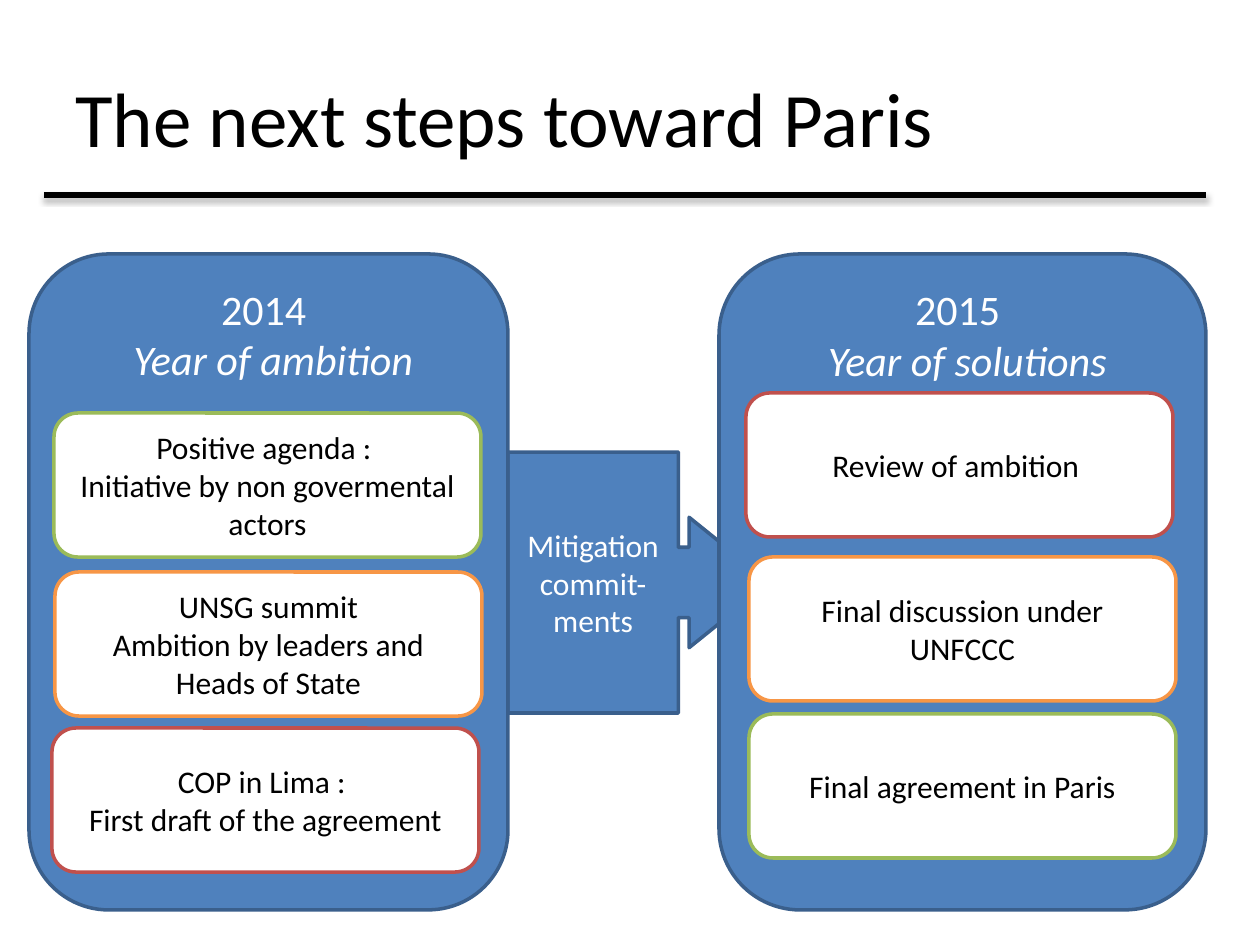
from dataclasses import dataclass

from lxml import etree
from pptx import Presentation
from pptx.dml.color import RGBColor
from pptx.enum.shapes import MSO_CONNECTOR, MSO_SHAPE
from pptx.enum.text import MSO_ANCHOR, PP_ALIGN
from pptx.oxml.ns import qn
from pptx.util import Emu, Pt

ROUND = MSO_SHAPE.ROUNDED_RECTANGLE
ARROW = MSO_SHAPE.RIGHT_ARROW_CALLOUT
LINE = MSO_CONNECTOR.STRAIGHT
TOP, MID = MSO_ANCHOR.TOP, MSO_ANCHOR.MIDDLE
LEFT, MIDDLE = PP_ALIGN.LEFT, PP_ALIGN.CENTER

SCALE = 914400 / 126  # EMU in one px


@dataclass(frozen=True)
class Theme:
    font: str = "Calibri"
    black: str = "000000"
    white: str = "FFFFFF"
    blue: str = "4F81BD"
    edge: str = "3A5F8C"
    green: str = "9BBB59"
    orange: str = "F79646"
    red: str = "C0504D"
    title: int = 44
    head: int = 24
    body: int = 18
    border: int = 2
    rule: int = 3


@dataclass(frozen=True)
class Card:
    x: int
    y: int
    color: str
    text: str


@dataclass(frozen=True)
class Panel:
    x: int
    width: int
    text: str
    cards: tuple[Card, ...]


THEME = Theme()
PANEL_Y, PANEL_H = 254, 656
CARD_W, CARD_H = 427, 144

PANELS = (
    Panel(719, 487, "2015 \n Year of solutions", (
        Card(749, 714, THEME.green, "Final agreement in Paris"),
        Card(749, 557, THEME.orange, "Final discussion under UNFCCC"),
        Card(746, 393, THEME.red, "Review of ambition "),
    )),
    Panel(29, 479, "2014 \n Year of ambition", (
        Card(54, 413, THEME.green,
             "Positive agenda : \nInitiative by non govermental actors"),
        Card(55, 572, THEME.orange,
             "UNSG summit\nAmbition by leaders and Heads of State"),
        Card(52, 728, THEME.red,
             "COP in Lima : \nFirst draft of the agreement"),
    )),
)


def px(count: int) -> Emu:
    return Emu(round(count * SCALE))


def rgb(color: str) -> RGBColor:
    return RGBColor.from_string(color)


def write(shape, text: str, size: int, color: str, align=MIDDLE, anchor=MID) -> None:
    frame = shape.text_frame
    frame.text = text
    frame.word_wrap = True
    frame.vertical_anchor = anchor
    for para in frame.paragraphs:
        para.alignment = align
        for run in para.runs:
            run.font.name = THEME.font
            run.font.size = Pt(size)
            run.font.color.rgb = rgb(color)


def box(slide, kind, x: int, y: int, width: int, height: int, fill: str, edge: str):
    shape = slide.shapes.add_shape(kind, px(x), px(y), px(width), px(height))
    shape.shadow.inherit = False
    shape.fill.solid()
    shape.fill.fore_color.rgb = rgb(fill)
    shape.line.color.rgb = rgb(edge)
    shape.line.width = Pt(THEME.border)
    return shape


def draw_title(slide) -> None:
    title = slide.shapes.add_textbox(px(63), px(38), px(1134), px(158))
    write(title, "The next steps toward Paris", THEME.title, THEME.black, LEFT)


def draw_rule(slide) -> None:
    rule = slide.shapes.add_connector(LINE, px(44), px(195), px(1206), px(195))
    rule.line.color.rgb = rgb(THEME.black)
    rule.line.width = Pt(THEME.rule)
    # Soft shadow straight below the rule
    effects = etree.SubElement(rule._element.spPr, qn("a:effectLst"))
    shadow = etree.SubElement(effects, qn("a:outerShdw"), blurRad=str(Pt(3.1)),
                              dist=str(Pt(1.8)), dir="5400000", rotWithShape="0")
    tint = etree.SubElement(shadow, qn("a:srgbClr"), val=THEME.black)
    etree.SubElement(tint, qn("a:alpha"), val="35000")


def draw_arrow(slide) -> None:
    arrow = box(slide, ARROW, 508, 452, 262, 261, THEME.blue, THEME.edge)
    for index, value in enumerate((0.27, 0.25, 0.31, 0.65)):
        arrow.adjustments[index] = value
    write(arrow, "Mitigation commit-ments", THEME.body, THEME.white)


def draw_panel(slide, panel: Panel) -> None:
    shape = box(slide, ROUND, panel.x, PANEL_Y, panel.width, PANEL_H,
                THEME.blue, THEME.edge)
    write(shape, panel.text, THEME.head, THEME.white, anchor=TOP)
    for run in shape.text_frame.paragraphs[1].runs:
        run.font.italic = True
    for card in panel.cards:
        item = box(slide, ROUND, card.x, card.y, CARD_W, CARD_H,
                   THEME.white, card.color)
        write(item, card.text, THEME.body, THEME.black)


def main() -> None:
    deck = Presentation()
    deck.slide_width, deck.slide_height = px(1260), px(945)
    slide = deck.slides.add_slide(deck.slide_layouts[6])

    # The arrow lies behind both panels
    draw_arrow(slide)
    draw_title(slide)
    draw_rule(slide)
    for panel in PANELS:
        draw_panel(slide, panel)

    deck.save("out.pptx")


if __name__ == "__main__":
    main()
